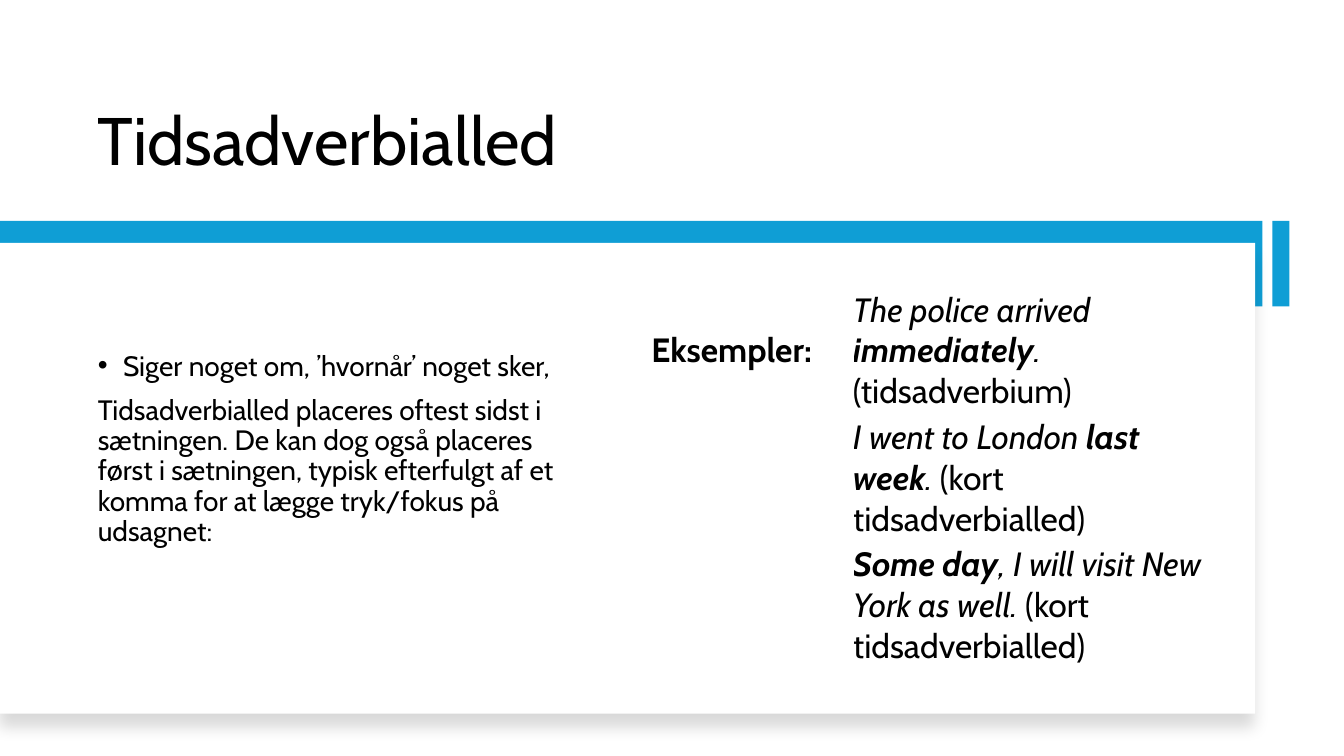
from lxml.etree import SubElement
from pptx import Presentation
from pptx.dml.color import RGBColor
from pptx.enum.shapes import MSO_SHAPE
from pptx.enum.text import MSO_ANCHOR, MSO_AUTO_SIZE, PP_ALIGN
from pptx.oxml import parse_xml
from pptx.oxml.ns import nsdecls, qn
from pptx.util import Inches, Pt

BLACK = RGBColor(0x00, 0x00, 0x00)
WHITE = RGBColor(0xFF, 0xFF, 0xFF)
BLUE = RGBColor(0x0F, 0x9E, 0xD5)
FONT = "Cabin"

EXPLANATION = [
    "Siger noget om, ’hvornår’ noget sker,",
    "Tidsadverbialled placeres oftest sidst i sætningen. De kan dog også placeres "
    "først i sætningen, typisk efterfulgt af et komma for at lægge tryk/fokus på udsagnet:",
]
# Each example: (text, bold, italic) spans
EXAMPLES = [
    [("The police arrived ", False, True), ("immediately", True, True),
     (".", False, True), (" (tidsadverbium)", False, False)],
    [("I went to London ", False, True), ("last week", True, True),
     (".", False, True), (" (kort tidsadverbialled)", False, False)],
    [("Some day", True, True), (", I will visit New York as well.", False, True),
     (" (kort tidsadverbialled)", False, False)],
]


def set_font(para, size):
    para.font.name = FONT
    para.font.size = Pt(size)
    para.font.color.rgb = BLACK


def place(shape, left, top, width, height):
    shape.left, shape.top = Inches(left), Inches(top)
    shape.width, shape.height = Inches(width), Inches(height)


def add_rectangle(page, color, left, top, width, height):
    box = page.shapes.add_shape(MSO_SHAPE.RECTANGLE, Inches(left), Inches(top),
                                Inches(width), Inches(height))
    box.shadow.inherit = False
    box.fill.solid()
    box.fill.fore_color.rgb = color
    box.line.fill.background()
    return box


def add_soft_shadow(shape):
    effects = shape.element.spPr.find(qn("a:effectLst"))
    effects.append(parse_xml(
        f'<a:outerShdw {nsdecls("a")} blurRad="{Pt(11)}" dist="{Pt(10)}" dir="5400000" '
        'algn="t" rotWithShape="0"><a:srgbClr val="000000"><a:alpha val="15000"/>'
        '</a:srgbClr></a:outerShdw>'))


def add_backdrop(page, left, top, width, height):
    """Blue band with its end bar, and the white panel, all behind the text."""
    band_height = 0.85
    band = add_rectangle(page, BLUE, left, top, width - 0.27, band_height)
    end_bar = add_rectangle(page, BLUE, left + width - 0.17, top, 0.17, band_height)
    panel = add_rectangle(page, WHITE, left, top + 0.22, width - 0.34, height - 0.22)
    add_soft_shadow(panel)
    tree = band.element.getparent()
    for index, shape in enumerate((band, end_bar, panel), start=2):
        tree.insert(index, shape.element)


def fill_title(title, left, top, width, height):
    place(title, left, top, width, height)
    frame = title.text_frame
    frame.text = "Tidsadverbialled"
    frame.vertical_anchor = MSO_ANCHOR.BOTTOM
    frame.auto_size = MSO_AUTO_SIZE.NONE
    para = frame.paragraphs[0]
    para.alignment = PP_ALIGN.LEFT
    para.line_spacing = 0.9
    set_font(para, 48)


def fill_explanation(body, left, top, width, height):
    place(body, left, top, width, height)
    frame = body.text_frame
    frame.text = "\n".join(EXPLANATION)
    frame.vertical_anchor = MSO_ANCHOR.MIDDLE
    frame.auto_size = MSO_AUTO_SIZE.NONE
    frame.margin_bottom = Inches(0.79)
    for index, para in enumerate(frame.paragraphs):
        bulleted = index == 0
        para.line_spacing = 0.9
        para.space_before = Pt(0 if bulleted else 10)
        properties = para._p.get_or_add_pPr()
        indent = Inches(0.25) if bulleted else 0
        properties.set("marL", str(indent))
        properties.set("indent", str(-indent))
        if bulleted:
            SubElement(properties, qn("a:buFont"), typeface="Arial")
            SubElement(properties, qn("a:buChar"), char="•")
        else:
            SubElement(properties, qn("a:buNone"))
        set_font(para, 20)


def fill_cell(cell, spans):
    cell.vertical_anchor = MSO_ANCHOR.MIDDLE
    cell.margin_left = cell.margin_right = cell.margin_top = cell.margin_bottom = 0
    para = cell.text_frame.paragraphs[0]
    for text, bold, italic in spans:
        span = para.add_run()
        span.text = text
        span.font.bold = bold
        span.font.italic = italic
    set_font(para, 24)


def add_examples(page, left, top, width, height):
    table = page.shapes.add_table(len(EXAMPLES), 2, Inches(left), Inches(top),
                                  Inches(width), Inches(height)).table
    table.first_row = table.horz_banding = False
    table.columns[0].width = Inches(2)
    table.columns[1].width = Inches(width - 2)
    for cell in table.iter_cells():
        cell.fill.background()
    fill_cell(table.cell(0, 0), [("Eksempler:", True, False)])
    for row, spans in enumerate(EXAMPLES):
        fill_cell(table.cell(row, 1), spans)


def main():
    deck = Presentation()
    deck.slide_width, deck.slide_height = Inches(13.33), Inches(7.5)
    page = deck.slides.add_slide(deck.slide_layouts[1])
    add_backdrop(page, 0, 2.19, 12.79, 4.89)
    fill_title(page.shapes.title, 0.87, 0.42, 11.01, 1.42)
    fill_explanation(page.placeholders[1], 0.87, 2.84, 4.96, 3.98)
    add_examples(page, 6.46, 2.85, 5.63, 3.79)
    deck.save("out.pptx")


if __name__ == "__main__":
    main()
